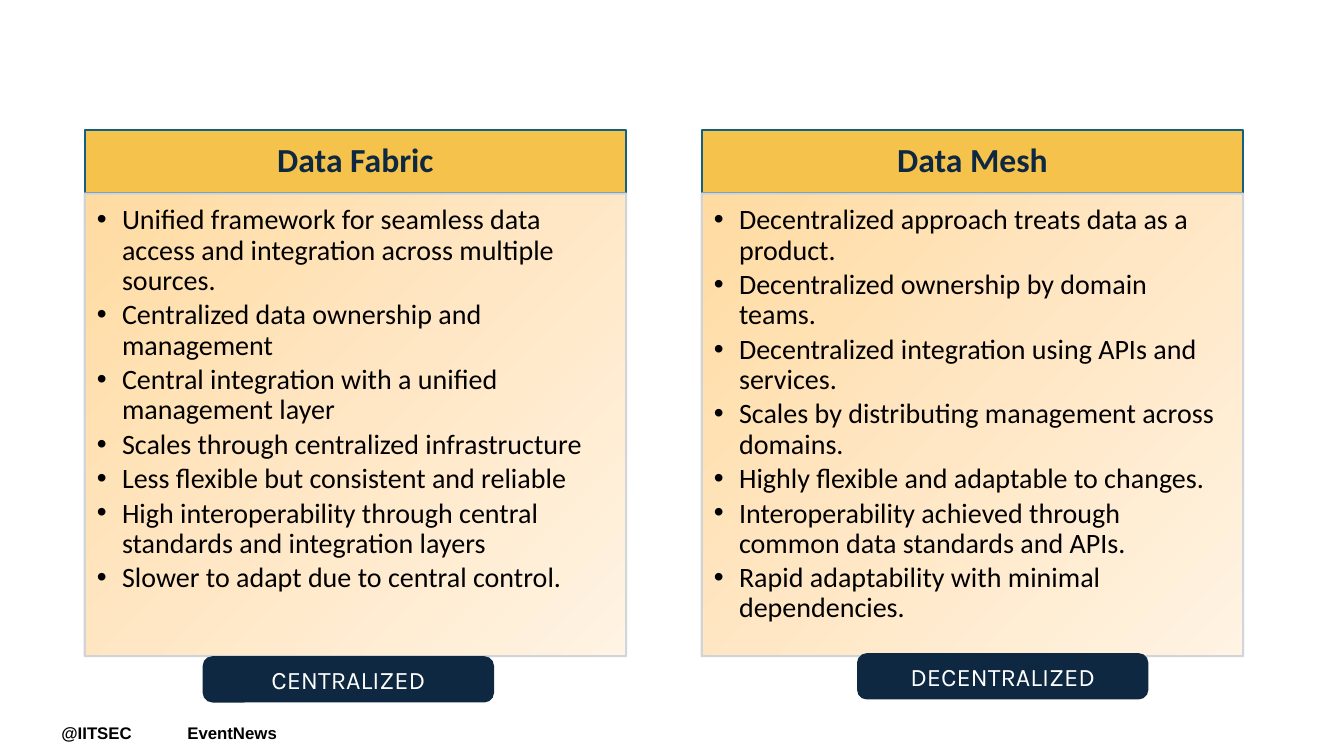
from lxml import etree
from pptx import Presentation
from pptx.dml.color import RGBColor
from pptx.enum.shapes import MSO_SHAPE
from pptx.enum.text import MSO_ANCHOR, MSO_AUTO_SIZE, PP_ALIGN
from pptx.oxml import parse_xml
from pptx.oxml.ns import nsdecls, qn
from pptx.util import Inches, Pt

ROUNDED = MSO_SHAPE.ROUNDED_RECTANGLE
CENTER, LEFT = PP_ALIGN.CENTER, PP_ALIGN.LEFT
MIDDLE, TOP = MSO_ANCHOR.MIDDLE, MSO_ANCHOR.TOP
NO_FIT, GROW = MSO_AUTO_SIZE.NONE, MSO_AUTO_SIZE.SHAPE_TO_FIT_TEXT

COMPARISON_LAYOUT = 4
PANEL_WIDTH = 5.37
HEADING_TOP, HEADING_HEIGHT = 1.29, 0.63
LIST_HEIGHT = 4.59
NAVY = "0E2841"
GRADIENT = [(0, "FFDBA1"), (50, "FFE7C5"), (100, "FFF3E3")]

HEADING_FONT = {"size": Pt(24), "name": "Calibri", "bold": True}
LIST_FONT = {"size": Pt(20), "name": "Calibri", "bold": False}
BADGE_FONT = {"size": Pt(18), "name": "Karla"}
HANDLE_FONT = {"size": Pt(12), "name": "Arial", "bold": True}

PANELS = [
    {
        "left": 0.84,
        "heading": "Data Fabric",
        "items": [
            "Unified framework for seamless data access and integration across multiple sources.",
            "Centralized data ownership and management",
            "Central integration with a unified management layer",
            "Scales through centralized infrastructure",
            "Less flexible but consistent and reliable",
            "High interoperability through central standards and integration layers",
            "Slower to adapt due to central control.",
        ],
        "badge": ("CENTRALIZED", 2.01, 6.51),
    },
    {
        "left": 6.96,
        "heading": "Data Mesh",
        "items": [
            "Decentralized approach treats data as a product.",
            "Decentralized ownership by domain teams.",
            "Decentralized integration using APIs and services.",
            "Scales by distributing management across domains.",
            "Highly flexible and adaptable to changes.",
            "Interoperability achieved through common data standards and APIs.",
            "Rapid adaptability with minimal dependencies.",
        ],
        "badge": ("DECENTRALIZED", 8.5, 6.48),
    },
]
HANDLES = [("@IITSEC", 0.51, 0.92), ("EventNews", 1.76, 1.13)]


def color(value):
    return RGBColor.from_string(value)


def set_values(target, values):
    for name, value in values.items():
        setattr(target, name, value)


def place(shape, left, top, width, height):
    names = ("left", "top", "width", "height")
    set_values(shape, dict(zip(names, map(Inches, (left, top, width, height)))))


def set_frame(shape, anchor, insets):
    frame = shape.text_frame
    names = ("margin_left", "margin_top", "margin_right", "margin_bottom")
    set_values(frame, {"word_wrap": True, "auto_size": NO_FIT, "vertical_anchor": anchor})
    set_values(frame, dict(zip(names, map(Inches, insets))))
    return frame


def write(paragraph, text, font, text_color, alignment):
    paragraph.alignment = alignment
    run = paragraph.add_run()
    run.text = text
    set_values(run.font, font)
    run.font.color.rgb = color(text_color)


def space_paragraph(paragraph, percent_after):
    set_values(paragraph, {"line_spacing": 0.9, "space_before": Pt(0), "space_after": Pt(0)})
    after = paragraph._p.pPr.find(qn("a:spcAft"))
    after.remove(after[0])
    etree.SubElement(after, qn("a:spcPct"), val=str(percent_after * 1000))


def add_bullet(paragraph):
    properties = paragraph._p.get_or_add_pPr()
    properties.set("marL", str(Inches(0.25)))
    properties.set("indent", str(Inches(-0.25)))
    etree.SubElement(properties, qn("a:buFont"), typeface="Arial")
    etree.SubElement(properties, qn("a:buChar"), char="•")


def set_line(shape, line_color):
    shape.line.color.rgb = color(line_color)
    shape.line.width = Pt(1.5)


def fill_corner_gradient(shape):
    stops = "".join(
        f'<a:gs pos="{position * 1000}"><a:srgbClr val="{value}"/></a:gs>'
        for position, value in GRADIENT
    )
    shape._element.spPr.append(parse_xml(
        f'<a:gradFill {nsdecls("a")} rotWithShape="1"><a:gsLst>{stops}</a:gsLst>'
        '<a:path path="circle"><a:fillToRect r="100000" b="100000"/></a:path></a:gradFill>'
    ))


def format_heading(shape, text, left):
    place(shape, left, HEADING_TOP, PANEL_WIDTH, HEADING_HEIGHT)
    shape.fill.solid()
    shape.fill.fore_color.rgb = color("F5C24C")
    set_line(shape, "156082")
    paragraph = set_frame(shape, MIDDLE, (0.19, 0.11, 0.19, 0.11)).paragraphs[0]
    space_paragraph(paragraph, 35)
    write(paragraph, text, HEADING_FONT, NAVY, CENTER)


def format_list(shape, items, left):
    place(shape, left, HEADING_TOP + HEADING_HEIGHT, PANEL_WIDTH, LIST_HEIGHT)
    fill_corner_gradient(shape)
    set_line(shape, "CCD2D8")
    line_color = shape.line._ln.find(".//" + qn("a:srgbClr"))
    etree.SubElement(line_color, qn("a:alpha"), val="90000")
    frame = set_frame(shape, TOP, (0.12, 0.12, 0.16, 0.17))
    for index, item in enumerate(items):
        paragraph = frame.add_paragraph() if index else frame.paragraphs[0]
        paragraph.level = 1
        space_paragraph(paragraph, 15)
        add_bullet(paragraph)
        write(paragraph, item, LIST_FONT, "000000", LEFT)


def add_badge(slide, text, left, top):
    shape = slide.shapes.add_shape(
        ROUNDED, Inches(left), Inches(top), Inches(2.89), Inches(0.46))
    shape.adjustments[0] = 0.21
    shape.shadow.inherit = False
    shape.fill.solid()
    shape.fill.fore_color.rgb = color(NAVY)
    shape.line.fill.background()
    write(shape.text_frame.paragraphs[0], text, BADGE_FONT, "FFFFFF", CENTER)


def add_handle(slide, text, left, width):
    box = slide.shapes.add_textbox(
        Inches(left), Inches(7.12), Inches(width), Inches(0.3))
    set_values(box.text_frame, {"word_wrap": False, "auto_size": GROW})
    write(box.text_frame.paragraphs[0], text, HANDLE_FONT, "000000", LEFT)


def main():
    presentation = Presentation()
    presentation.slide_width = Inches(13.33)
    presentation.slide_height = Inches(7.5)
    slide = presentation.slides.add_slide(presentation.slide_layouts[COMPARISON_LAYOUT])
    title, *panel_shapes = slide.placeholders
    title._element.getparent().remove(title._element)
    for panel, heading, body in zip(PANELS, panel_shapes[::2], panel_shapes[1::2]):
        format_heading(heading, panel["heading"], panel["left"])
        format_list(body, panel["items"], panel["left"])
        add_badge(slide, *panel["badge"])
    for handle in HANDLES:
        add_handle(slide, *handle)
    presentation.save("out.pptx")


if __name__ == "__main__":
    main()
